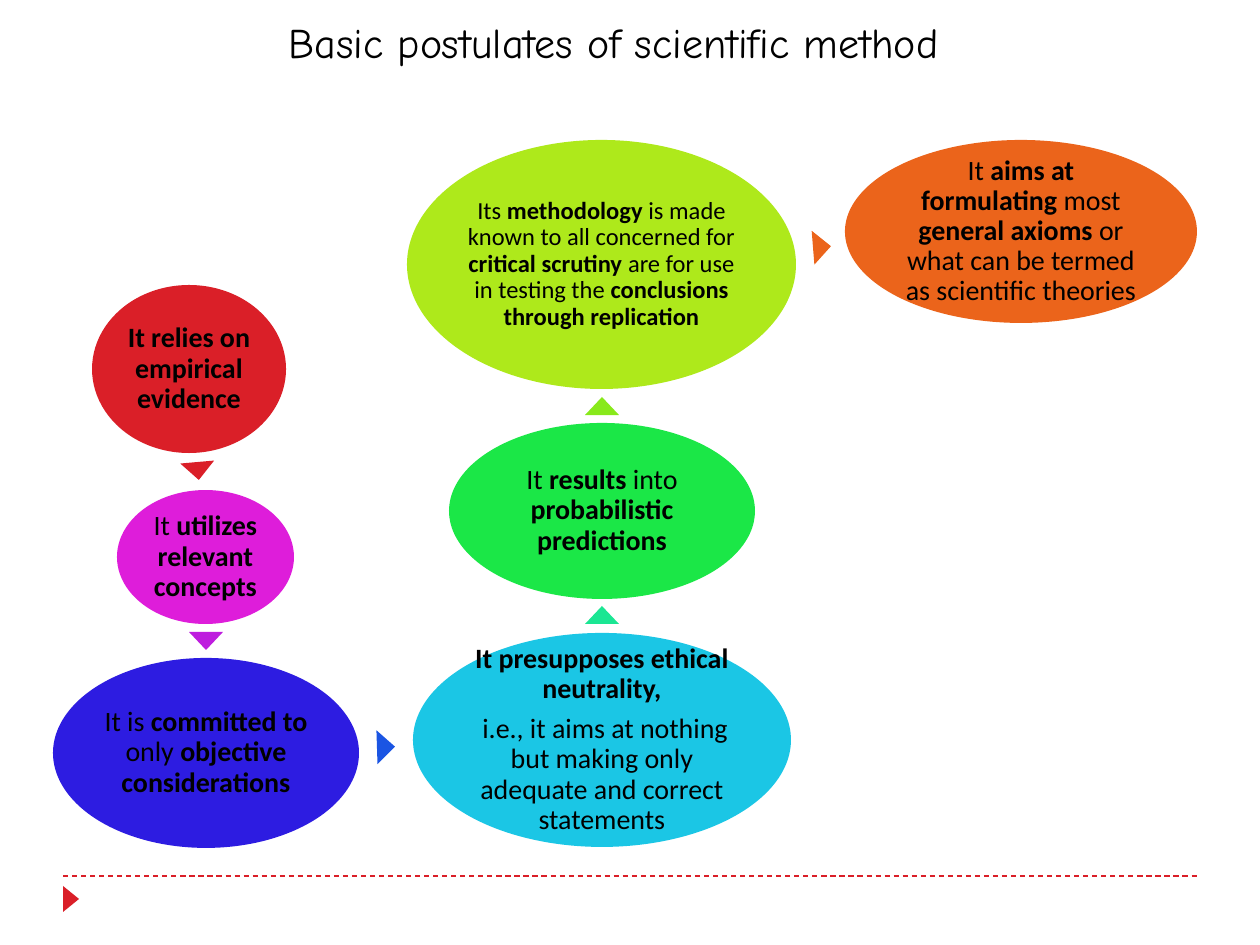
from dataclasses import dataclass

from lxml import etree
from pptx import Presentation
from pptx.dml.color import RGBColor
from pptx.enum.dml import MSO_LINE
from pptx.enum.shapes import MSO_CONNECTOR, MSO_SHAPE
from pptx.enum.text import MSO_ANCHOR, MSO_AUTO_SIZE, PP_ALIGN
from pptx.oxml.ns import qn
from pptx.util import Emu, Pt

OVAL = MSO_SHAPE.OVAL
TRIANGLE = MSO_SHAPE.ISOSCELES_TRIANGLE
STRAIGHT = MSO_CONNECTOR.STRAIGHT
DASH = MSO_LINE.DASH
MIDDLE = MSO_ANCHOR.MIDDLE
CENTER = PP_ALIGN.CENTER
FIT_SHAPE = MSO_AUTO_SIZE.SHAPE_TO_FIT_TEXT

EMU_PER_PX = 914400 / 126
BODY_FONT = "Calibri"
TITLE_FONT = "Comic Neue"
ARROW_WIDTH, ARROW_HEIGHT = 34, 18

COLORS = {
    "text": "000000",
    "red": "DA1F28",
    "magenta": "DE1DDA",
    "purple": "BE1DDE",
    "indigo": "2D1CE1",
    "blue": "1B55E3",
    "cyan": "1BC6E5",
    "mint": "1BE693",
    "green": "1BE747",
    "leaf": "88E91B",
    "lime": "AEE91B",
    "orange": "EB641B",
}


@dataclass(frozen=True)
class Postulate:
    """An oval; ** in its paragraphs switches bold on and off."""
    left: int
    top: int
    width: int
    height: int
    color: str
    paragraphs: tuple[str, ...]
    size: int = 16


@dataclass(frozen=True)
class Arrow:
    center_x: int
    center_y: int
    rotation: float
    color: str
    width: int = ARROW_WIDTH
    height: int = ARROW_HEIGHT


POSTULATES = [
    Postulate(92, 285, 194, 168, "red", ("**It relies on empirical evidence**",)),
    Postulate(117, 490, 177, 134, "magenta", ("It **utilizes relevant concepts**",)),
    Postulate(53, 658, 306, 190, "indigo",
              ("It is **committed to **only **objective considerations**",)),
    Postulate(413, 633, 378, 214, "cyan",
              ("**It presupposes ethical neutrality,**",
               " i.e., it aims at nothing but making only adequate and correct statements")),
    Postulate(449, 423, 306, 176, "green",
              ("It **results **into **probabilistic predictions**",)),
    Postulate(407, 140, 389, 249, "lime",
              ("Its **methodology** is made known to all concerned for "
               "**critical scrutiny **are for use in testing the "
               "**conclusions through replication**",), 14),
    Postulate(845, 140, 352, 183, "orange",
              ("It **aims at formulating **most **general axioms **"
               "or what can be termed as scientific theories",)),
]

ARROWS = [
    Arrow(71, 899, 90, "red", 26, 16),
    Arrow(198, 471, 175, "red"),
    Arrow(206, 641, 180, "purple"),
    Arrow(386, 747, 88.2, "blue"),
    Arrow(602, 615, 0, "mint"),
    Arrow(602, 406, 0, "leaf"),
    Arrow(822, 247, 85.4, "orange"),
]


def px(length: float) -> Emu:
    return Emu(round(length * EMU_PER_PX))


def rgb(name: str) -> RGBColor:
    return RGBColor.from_string(COLORS[name])


def format_span(span, font: str, size: int, bold: bool = False) -> None:
    span.font.name = font
    span.font.size = Pt(size)
    span.font.bold = bold
    span.font.color.rgb = rgb("text")


def add_filled(page, kind, left: float, top: float, width: int, height: int, color: str):
    shape = page.shapes.add_shape(kind, px(left), px(top), px(width), px(height))
    shape.shadow.inherit = False
    shape.fill.solid()
    shape.fill.fore_color.rgb = rgb(color)
    shape.line.fill.background()
    return shape


def add_postulate(page, item: Postulate) -> None:
    oval = add_filled(page, OVAL, item.left, item.top, item.width, item.height, item.color)
    frame = oval.text_frame
    frame.word_wrap = True
    frame.vertical_anchor = MIDDLE
    frame.margin_left = frame.margin_right = px(3)
    frame.margin_top = frame.margin_bottom = px(3)
    for index, text in enumerate(item.paragraphs):
        para = frame.add_paragraph() if index else frame.paragraphs[0]
        para.alignment = CENTER
        para.line_spacing = 0.9
        para.space_after = Pt(0.35 * item.size)
        for part_index, part in enumerate(text.split("**")):
            if part:
                span = para.add_run()
                span.text = part
                format_span(span, BODY_FONT, item.size, part_index % 2 == 1)


def add_arrow(page, item: Arrow) -> None:
    triangle = add_filled(page, TRIANGLE, item.center_x - item.width / 2,
                          item.center_y - item.height / 2, item.width, item.height, item.color)
    triangle.rotation = item.rotation


def add_footer_rule(page) -> None:
    rule = page.shapes.add_connector(STRAIGHT, px(63), px(876), px(1197), px(876))
    rule.line.color.rgb = rgb("red")
    rule.line.width = Pt(0.75)
    rule.line.dash_style = DASH
    etree.SubElement(rule._element.spPr, qn("a:effectLst"))


def add_title(page) -> None:
    box = page.shapes.add_textbox(px(233), px(10), px(775), px(63))
    frame = box.text_frame
    frame.text = "Basic postulates of scientific method "
    frame.word_wrap = False
    frame.auto_size = FIT_SHAPE
    para = frame.paragraphs[0]
    para.alignment = CENTER
    format_span(para.runs[0], TITLE_FONT, 24)


def main() -> None:
    deck = Presentation()
    deck.slide_width, deck.slide_height = px(1260), px(945)
    page = deck.slides.add_slide(deck.slide_layouts[6])
    add_footer_rule(page)
    for postulate in POSTULATES:
        add_postulate(page, postulate)
    for arrow in ARROWS:
        add_arrow(page, arrow)
    add_title(page)
    deck.save("out.pptx")


if __name__ == "__main__":
    main()
